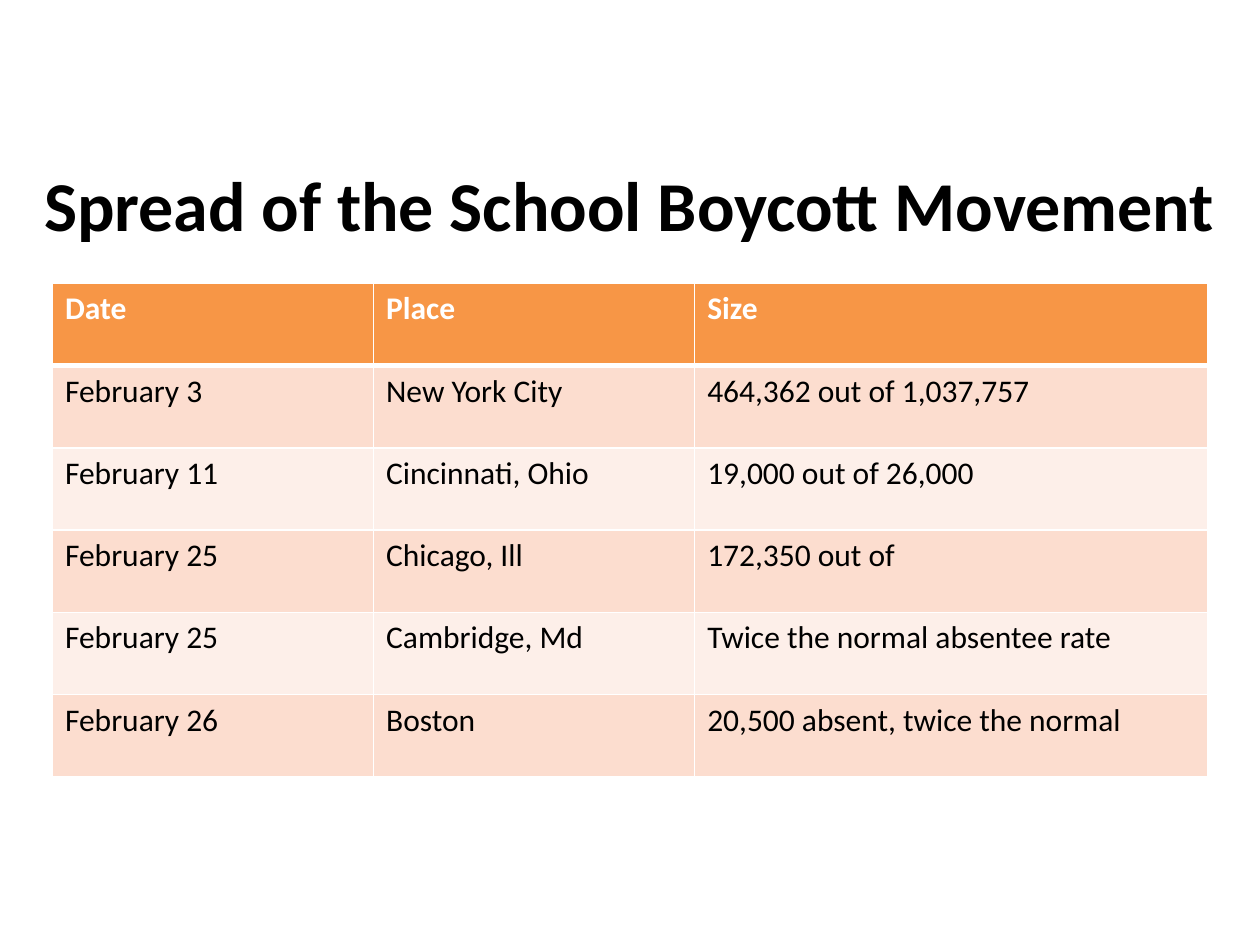
from lxml.etree import SubElement
from pptx import Presentation
from pptx.dml.color import RGBColor
from pptx.enum.text import MSO_ANCHOR, MSO_AUTO_SIZE, PP_ALIGN
from pptx.oxml.ns import qn
from pptx.util import Pt


def add_run(p, text, size, color, bold):
    r = p.add_run()
    r.text = text
    r.font.name = "Calibri"
    r.font.size = Pt(size)
    r.font.bold = bold
    r.font.color.rgb = RGBColor.from_string(color)


def add_border(cell, side, width):
    ln = SubElement(cell._tc.get_or_add_tcPr(), qn(f"a:ln{side}"), w=str(Pt(width)))
    SubElement(SubElement(ln, qn("a:solidFill")), qn("a:srgbClr"), val="FFFFFF")


prs = Presentation()
prs.slide_width, prs.slide_height = Pt(720), Pt(540)
s = prs.slides.add_slide(prs.slide_layouts[5])

# Title
title = s.shapes.title
title.left, title.top, title.width, title.height = Pt(18), Pt(88.5), Pt(691), Pt(55.5)
tf = title.text_frame
tf.word_wrap = False
tf.auto_size = MSO_AUTO_SIZE.SHAPE_TO_FIT_TEXT
tf.vertical_anchor = MSO_ANCHOR.TOP
p = tf.paragraphs[0]
p.alignment = PP_ALIGN.LEFT
add_run(p, "Spread of the School Boycott Movement", 40, "000000", True)

# Table of boycotts
rows = [
    ("Date", "Place", "Size"),
    ("February 3", "New York City", "464,362 out of 1,037,757"),
    ("February 11", "Cincinnati, Ohio", "19,000 out of 26,000"),
    ("February 25", "Chicago, Ill", "172,350 out of"),
    ("February 25", "Cambridge, Md", "Twice the normal absentee rate"),
    ("February 26", "Boston", "20,500 absent, twice the normal"),
]
col_widths = [183.5, 183.5, 293]
row_height = 47
table = s.shapes.add_table(
    len(rows), len(col_widths), Pt(30), Pt(162),
    Pt(sum(col_widths)), Pt(row_height * len(rows))).table
for column, width in zip(table.columns, col_widths):
    column.width = Pt(width)

for i, row in enumerate(rows):
    header = i == 0
    fill = "F79646" if header else "FCDDCF" if i % 2 else "FDEFE9"
    for j, text in enumerate(row):
        cell = table.cell(i, j)
        for side in "LRTB":
            thick = (header and side == "B") or (i == 1 and side == "T")
            add_border(cell, side, 3 if thick else 1)
        cell.fill.solid()
        cell.fill.fore_color.rgb = RGBColor.from_string(fill)
        add_run(cell.text_frame.paragraphs[0], text, 18,
                "FFFFFF" if header else "000000", header)

prs.save("out.pptx")
